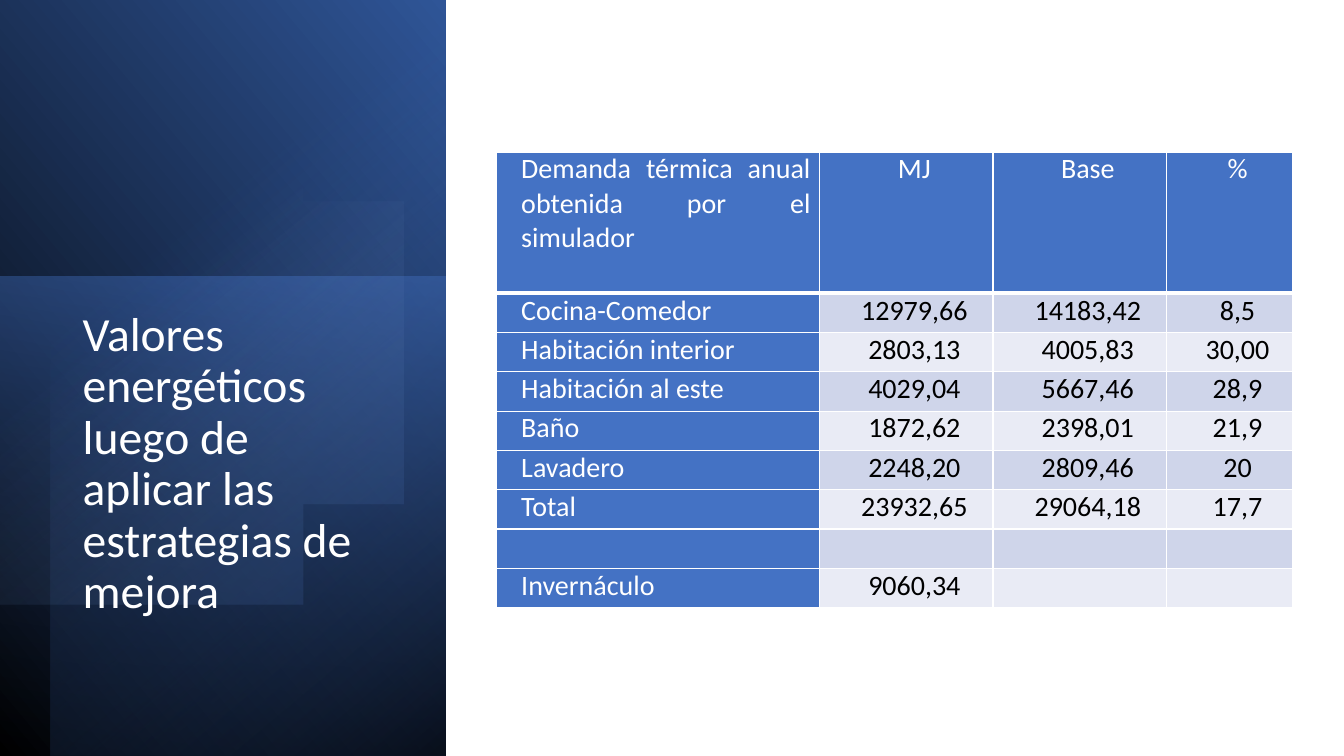
import math

import lxml.etree
import pptx
import pptx.dml.color
import pptx.enum.shapes
import pptx.enum.text
import pptx.oxml
import pptx.oxml.ns
import pptx.util

Inches, Pt = pptx.util.Inches, pptx.util.Pt
RGB = pptx.dml.color.RGBColor.from_string
ALIGN = pptx.enum.text.PP_ALIGN
qn = pptx.oxml.ns.qn

COLORS = {
    "black": "000000", "white": "FFFFFF", "navy": "203864", "deep": "2F5597",
    "blue": "4472C4", "sky": "8FAADC", "band_dark": "CFD5EA", "band_light": "E9EBF5",
}
FONT = "Calibri"


def fill_gradient(sp, angle, stops):
    """Fill sp without a line; stops are (position %, colour, opacity %), angle is clockwise."""
    sp.shadow.inherit = False
    sp.line.fill.background()
    sp.fill.gradient()
    grad = sp._element.spPr.find(qn("a:gradFill"))
    for child in list(grad):
        grad.remove(child)
    grad.set("rotWithShape", "1")
    gs_list = lxml.etree.SubElement(grad, qn("a:gsLst"))
    for pos, color, opacity in stops:
        gs = lxml.etree.SubElement(gs_list, qn("a:gs"), pos=str(pos * 1000))
        clr = lxml.etree.SubElement(gs, qn("a:srgbClr"), val=COLORS[color])
        if opacity < 100:
            lxml.etree.SubElement(clr, qn("a:alpha"), val=str(opacity * 1000))
    lxml.etree.SubElement(grad, qn("a:lin"), ang=str(round(angle * 60000)), scaled="0")


def format_text(p, size, color):
    for name, value in {"name": FONT, "size": Pt(size), "bold": False}.items():
        setattr(p.font, name, value)
    p.font.color.rgb = RGB(COLORS[color])


prs = pptx.Presentation()
prs.slide_width, prs.slide_height = Inches(13.33), Inches(7.5)
s = prs.slides.add_slide(prs.slide_layouts[5])

# Left panel: three turned rectangles with gradients
panels = [
    ((-1.55, 1.55, 7.52, 4.42), 90, True, 310, [(0, "black", 100), (100, "deep", 100)]),
    ((-0.17, 2.91, 4.76, 4.42), 270, False, 190, [(0, "blue", 50), (100, "navy", 0)]),
    ((-1.29, 1.79, 7.5, 3.92), 270, True, 220, [(0, "black", 59), (69, "blue", 0)]),
]
for box, rotation, flipped, angle, stops in panels:
    sp = s.shapes.add_shape(pptx.enum.shapes.MSO_SHAPE.RECTANGLE, *map(Inches, box))
    sp.rotation = rotation
    if flipped:
        sp._element.spPr.find(qn("a:xfrm")).set("flipH", "1")
    fill_gradient(sp, angle, stops)

# Disc cut off by the left edge of the slide
center_x, center_y, radius = 1.43, 3.45, 2.62
reach = math.acos(-center_x / radius)
steps = 120
angles = [reach * (2 * i / steps - 1) for i in range(steps + 1)]
points = [(center_x + radius * math.cos(a), center_y + radius * math.sin(a)) for a in angles]
builder = s.shapes.build_freeform(*points[0], scale=Inches(1))
builder.add_line_segments(points[1:], close=True)
fill_gradient(builder.convert_to_shape(), 51.6, [(39, "sky", 0), (100, "deep", 26)])

# Title, in front of the panel
title = s.shapes.title
s.shapes._spTree.append(title._element)
title.left, title.top, title.width, title.height = map(Inches, (0.72, 3.03, 3.15, 3.36))
tf = title.text_frame
tf.text = "Valores energéticos luego de aplicar las estrategias de mejora"
tf.word_wrap = True
tf.auto_size = pptx.enum.text.MSO_AUTO_SIZE.NONE
tf.vertical_anchor = pptx.enum.text.MSO_ANCHOR.TOP
p = tf.paragraphs[0]
p.alignment, p.line_spacing = ALIGN.LEFT, 0.9
format_text(p, 34, "white")

# Table
rows = [
    ("Demanda térmica anual obtenida por el simulador", "MJ", "Base", "%"),
    ("Cocina-Comedor", "12979,66", "14183,42", "8,5"),
    ("Habitación interior", "2803,13", "4005,83", "30,00"),
    ("Habitación al este", "4029,04", "5667,46", "28,9"),
    ("Baño", "1872,62", "2398,01", "21,9"),
    ("Lavadero", "2248,20", "2809,46", "20"),
    ("Total", "23932,65", "29064,18", "17,7"),
    ("", "", "", ""),
    ("Invernáculo", "9060,34", "", ""),
]
col_widths = [3.21, 1.72, 1.72, 1.25]
row_heights = [1.4] + [0.39] * (len(rows) - 1)
frame = s.shapes.add_table(len(rows), len(col_widths), Inches(4.92), Inches(1.51),
                           Inches(sum(col_widths)), Inches(sum(row_heights)))
table = frame.table
table.first_col = True
for col, width in zip(table.columns, col_widths):
    col.width = Inches(width)
for row, height in zip(table.rows, row_heights):
    row.height = Inches(height)

cell_format = {"margin_left": Inches(0.09), "margin_right": Inches(0.09),
               "margin_top": 0, "margin_bottom": 0}
header_borders = {"a:lnL": 1, "a:lnR": 1, "a:lnT": 1, "a:lnB": 3}
for i, values in enumerate(rows):
    for j, value in enumerate(values):
        cell = table.cell(i, j)
        for name, setting in cell_format.items():
            setattr(cell, name, setting)
        if i == 0:
            for tag, width in header_borders.items():
                ln = lxml.etree.SubElement(cell._tc.tcPr, qn(tag), w=str(Pt(width)))
                solid = lxml.etree.SubElement(ln, qn("a:solidFill"))
                lxml.etree.SubElement(solid, qn("a:srgbClr"), val=COLORS["white"])
        heading = i == 0 or j == 0
        band = "band_dark" if i % 2 else "band_light"
        cell.fill.solid()
        cell.fill.fore_color.rgb = RGB(COLORS["blue" if heading else band])
        cell.text = value
        p = cell.text_frame.paragraphs[0]
        p.alignment = ALIGN.CENTER if j else ALIGN.JUSTIFY
        p._p.get_or_add_pPr().set("marL", str(Inches(0.16)))
        format_text(p, 20, "white" if heading else "black")

prs.save("out.pptx")
